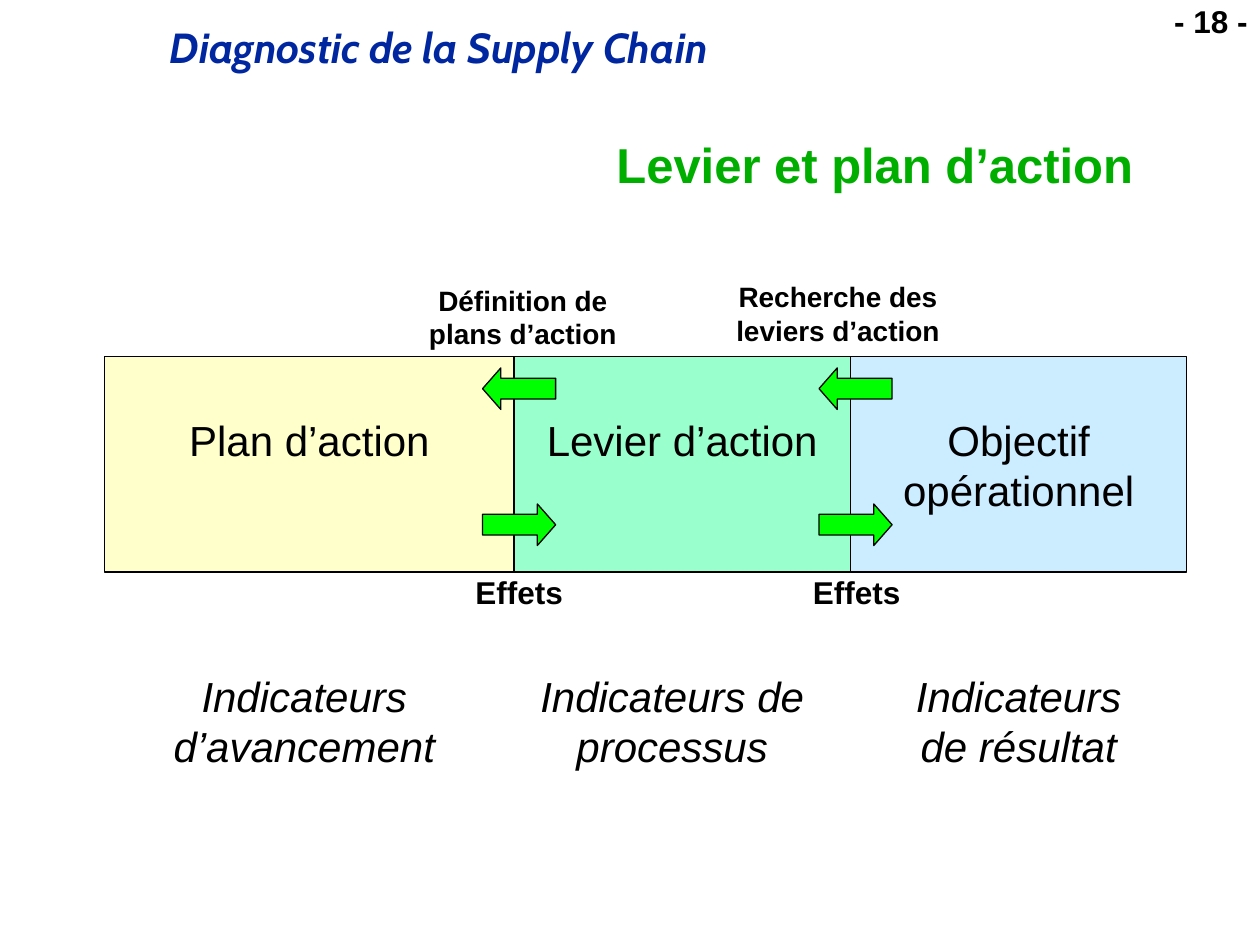
from pptx import Presentation
from pptx.dml.color import RGBColor
from pptx.enum.shapes import MSO_SHAPE as Shape
from pptx.enum.text import MSO_ANCHOR as Anchor, PP_ALIGN as Align
from pptx.util import Inches, Pt

STAGES = [
    (0.83, 3.25, "FFFFCC", "Plan d’action"),
    (4.08, 2.67, "99FFCC", "Levier d’action"),
    (6.75, 2.67, "CCECFF", "Objectif\nopérationnel"),
]
INDICATORS = [
    (0.83, 3.17, "Indicateurs\nd’avancement"),
    (4, 2.67, "Indicateurs de processus"),
    (6.75, 2.67, "Indicateurs\nde résultat"),
]
LINKS = [
    (4.08, (3.3, 2.2, 1.7, 0.64), "Définition de\nplans d’action", 3.67),
    (6.75, (5.74, 2.17, 1.82, 0.64), "Recherche des\nleviers d’action", 6.35),
]


def color(hex_code):
    """Return the colour for a hex string."""
    return RGBColor.from_string(hex_code)


def write(frame, text, size, ink="000000", align=Align.CENTER, bold=False,
          italic=False, font="Arial", spacing=None):
    """Fill a text frame with evenly styled paragraphs."""
    frame.text = text
    for paragraph in frame.paragraphs:
        paragraph.alignment = align
        paragraph.line_spacing = spacing
        paragraph.font.name = font
        paragraph.font.size = Pt(size)
        paragraph.font.bold = bold
        paragraph.font.italic = italic
        paragraph.font.color.rgb = color(ink)


def add_label(slide, box, text, size, wrap=True, anchor=Anchor.TOP, **style):
    """Place a text box in the given box."""
    frame = slide.shapes.add_textbox(*map(Inches, box)).text_frame
    frame.word_wrap = wrap
    frame.vertical_anchor = anchor
    write(frame, text, size, **style)


def add_block(slide, kind, box, fill):
    """Place a filled shape with a thin black outline."""
    block = slide.shapes.add_shape(kind, *map(Inches, box))
    block.shadow.inherit = False
    block.fill.solid()
    block.fill.fore_color.rgb = color(fill)
    block.line.color.rgb = color("000000")
    block.line.width = Pt(0.75)
    return block


def add_header(slide, left, top, width):
    """Place the course name, page number and title."""
    add_label(slide, (left + 1.25, top + 0.17, 8.08, 0.46),
              "Diagnostic de la Supply Chain", 24, ink="00279F", bold=True,
              italic=True, font="Cabin", align=Align.LEFT, spacing=0.9)
    add_label(slide, (left + width - 0.91, top, 0.91, 0.37), "- 18 -", 18,
              bold=True, align=Align.RIGHT, spacing=0.9)
    add_label(slide, (left + 1.17, top + 1.08, 7.92, 0.5),
              "Levier et plan d’action", 28, ink="00AE00", bold=True,
              align=Align.RIGHT, spacing=0.9, anchor=Anchor.MIDDLE)


def add_stages(slide, top, height):
    """Place the row of coloured stages."""
    for left, width, fill, name in STAGES:
        stage = add_block(slide, Shape.RECTANGLE, (left, top, width, height), fill)
        frame = stage.text_frame
        frame.word_wrap = True
        frame.vertical_anchor = Anchor.TOP
        frame.margin_top = Inches(0.46)
        write(frame, name, 24)


def add_links(slide, top, height):
    """Place the arrows and captions where two stages meet."""
    for border, caption_box, caption, effect_left in LINKS:
        for kind, offset in ((Shape.LEFT_ARROW, 0.09), (Shape.RIGHT_ARROW, 1.17)):
            arrow = add_block(slide, kind,
                              (border - 0.25, top + offset, 0.58, 0.33), "00FF00")
            arrow.adjustments[0] = 0.5
            arrow.adjustments[1] = 0.44
        add_label(slide, caption_box, caption, 16, wrap=False, bold=True)
        add_label(slide, (effect_left, top + height - 0.04, 0.9, 0.4), "Effets",
                  18, wrap=False, bold=True)


def add_indicators(slide, top, height):
    """Place the indicator under each stage."""
    for left, width, name in INDICATORS:
        add_label(slide, (left, top, width, height), name, 24, italic=True)


def main():
    """Build the slide and save it."""
    deck = Presentation()
    deck.slide_width, deck.slide_height = Inches(10), Inches(7.5)
    slide = deck.slides.add_slide(deck.slide_layouts[6])
    add_header(slide, 0, 0, 10)
    add_stages(slide, 2.83, 1.71)
    add_links(slide, 2.83, 1.71)
    add_indicators(slide, 5.27, 0.9)
    deck.save("out.pptx")


if __name__ == "__main__":
    main()
